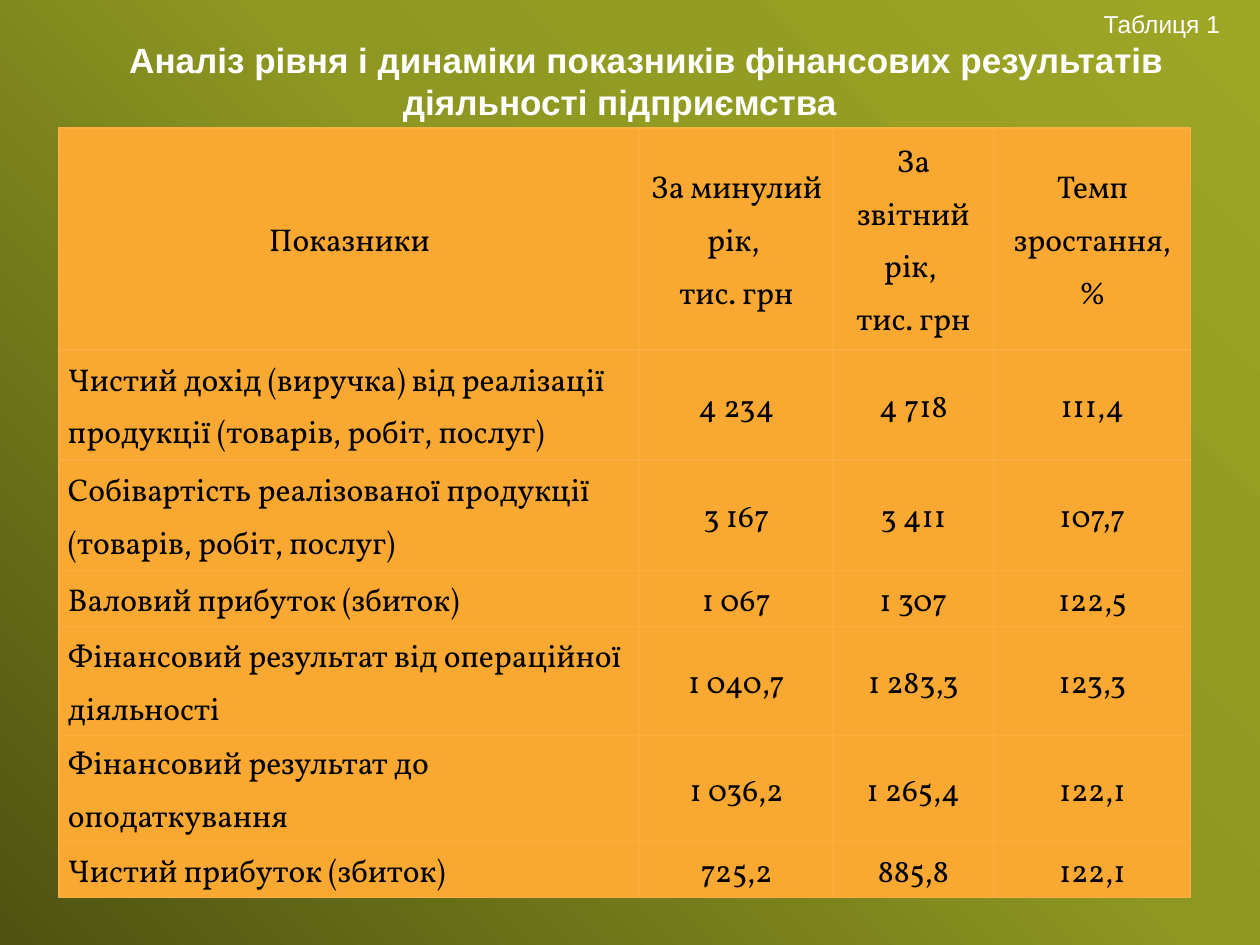
from lxml.etree import SubElement
from copy import deepcopy
from pptx import Presentation
from pptx.dml.color import RGBColor
from pptx.enum.text import MSO_ANCHOR, MSO_AUTO_SIZE, PP_ALIGN
from pptx.oxml.ns import qn
from pptx.util import Pt

PX = 914400 // 126
HUES = {"light": "9DA625", "mid": "8E9721", "dark": "4E5312",
        "cell": "F9A832", "edge": "FAAF40", "text": "000000", "title": "FFFFFF"}


def rgb(name):
    return RGBColor.from_string(HUES[name])


def style(para, font, size, hue, align, bold=False):
    para.alignment = align
    para.font.name = font
    para.font.size = Pt(size)
    para.font.bold = bold
    para.font.color.rgb = rgb(hue)


deck = Presentation()
deck.slide_width, deck.slide_height = 1260 * PX, 945 * PX
slide = deck.slides.add_slide(deck.slide_layouts[5])

# Background gradient, top right to bottom left
fill = slide.background.fill
fill.gradient()
fill.gradient_angle = 225
stops = slide._element.find(".//" + qn("a:gsLst"))
stops.append(deepcopy(stops[0]))
for stop, (hue, pos) in zip(fill.gradient_stops,
                            [("light", 0), ("mid", 0.45), ("dark", 1)]):
    stop.color.rgb = rgb(hue)
    stop.position = pos

# Title with the table number above it
title = slide.shapes.title
title.left, title.top, title.width, title.height = 0, 0, 1240 * PX, 159 * PX
frame = title.text_frame
frame.word_wrap = True
frame.auto_size = MSO_AUTO_SIZE.NONE
frame.vertical_anchor = MSO_ANCHOR.TOP
frame.margin_left = frame.margin_right = 13 * PX
frame.margin_top, frame.margin_bottom = 9 * PX, 0
heads = [
    ("Таблиця 1 ", 14, PP_ALIGN.RIGHT, False),
    ("Аналіз рівня і динаміки показників фінансових результатів \n"
     "діяльності підприємства", 20, PP_ALIGN.CENTER, True),
]
for i, (text, size, align, bold) in enumerate(heads):
    para = frame.add_paragraph() if i else frame.paragraphs[0]
    para.text = text.replace("\n", "\v")
    style(para, "Arial", size, "title", align, bold)
    para._p.get_or_add_pPr().set("indent", str(63 * PX))

# Table: a line feed in a cell is a line break
rows = [
    ["Показники", "За минулий рік, \nтис. грн", "За звітний рік, \nтис. грн",
     "Темп зростання, %"],
    ["Чистий дохід (виручка) від реалізації продукції (товарів, робіт, послуг)",
     "4 234", "4 718", "111,4"],
    ["Собівартість реалізованої продукції (товарів, робіт, послуг)",
     "3 167", "3 411", "107,7"],
    ["Валовий прибуток (збиток)", "1 067", "1 307", "122,5"],
    ["Фінансовий результат від операційної діяльності",
     "1 040,7", "1 283,3", "123,3"],
    ["Фінансовий результат до оподаткування", "1 036,2", "1 265,4", "122,1"],
    ["Чистий прибуток (збиток)", "725,2", "885,8", "122,1"],
]
wide = [581, 193, 161, 197]
high = [222, 110, 111, 56, 109, 106, 56]
table = slide.shapes.add_table(len(rows), len(wide), 59 * PX, 128 * PX,
                               sum(wide) * PX, sum(high) * PX).table
table.first_row = table.horz_banding = False
for col, size in zip(table.columns, wide):
    col.width = size * PX
for row, size in zip(table.rows, high):
    row.height = size * PX

for r, row in enumerate(rows):
    for c, text in enumerate(row):
        cell = table.cell(r, c)
        cell.vertical_anchor = MSO_ANCHOR.MIDDLE
        cell.margin_left = cell.margin_right = 9 * PX
        cell.margin_top = cell.margin_bottom = 0
        para = cell.text_frame.paragraphs[0]
        para.text = text.replace("\n", "\v")
        para.line_spacing = 1.2
        style(para, "Vollkorn", 18, "text",
              PP_ALIGN.LEFT if r and not c else PP_ALIGN.CENTER)
        # Borders come before the fill
        props = cell._tc.get_or_add_tcPr()
        for side in ("lnL", "lnR", "lnT", "lnB"):
            line = SubElement(props, qn("a:" + side), w=str(Pt(0.75)))
            paint = SubElement(line, qn("a:solidFill"))
            SubElement(paint, qn("a:srgbClr"), val=HUES["edge"])
        cell.fill.solid()
        cell.fill.fore_color.rgb = rgb("cell")
        props.append(props.find(qn("a:solidFill")))

deck.save("out.pptx")
